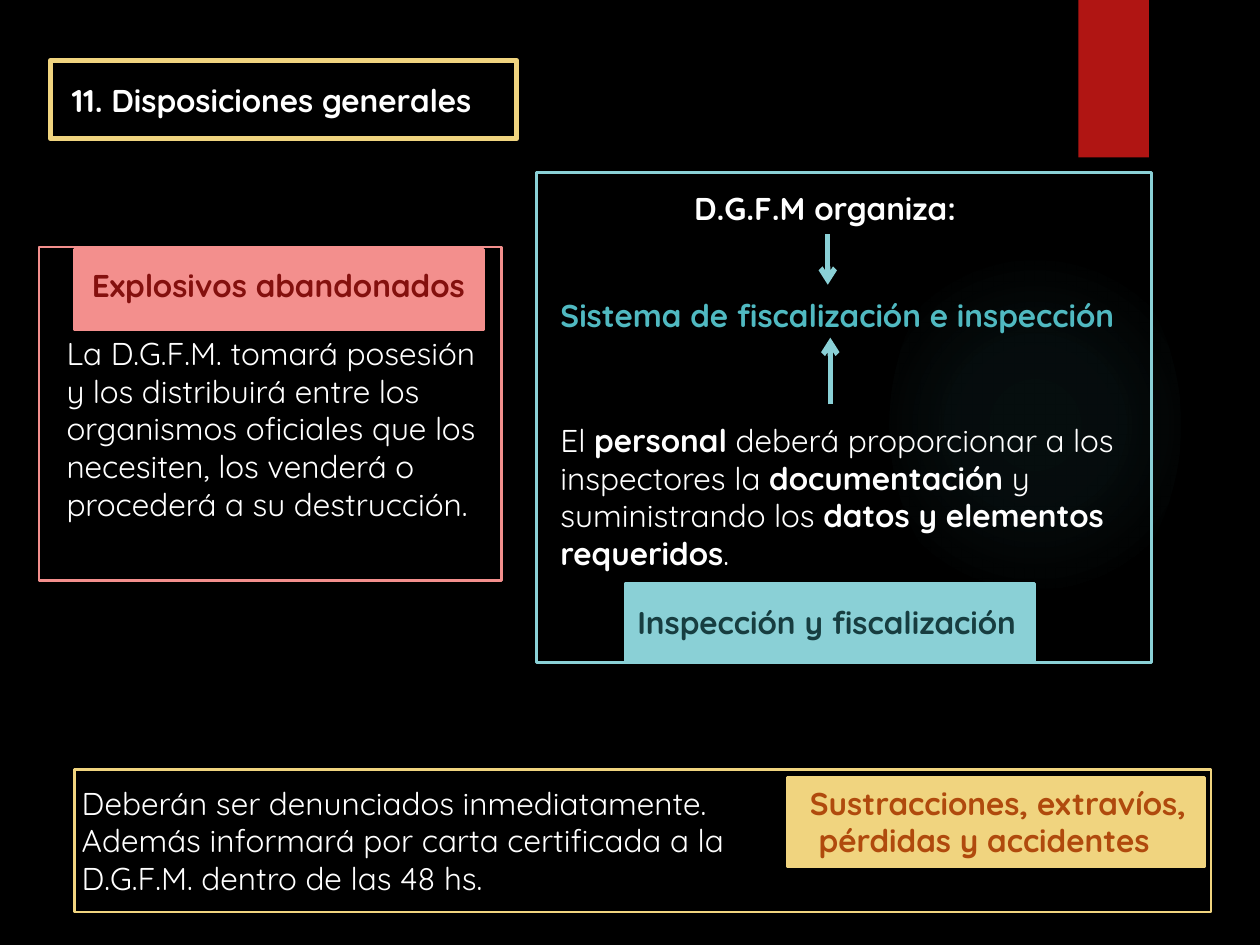
from lxml import etree
from pptx import Presentation
from pptx.dml.color import RGBColor
from pptx.enum.shapes import MSO_CONNECTOR, MSO_SHAPE
from pptx.enum.text import MSO_ANCHOR, MSO_AUTO_SIZE, PP_ALIGN
from pptx.oxml import parse_xml
from pptx.oxml.ns import qn
from pptx.util import Inches, Pt

FONT = "Quicksand"
COLORS = {
    "black": "000000", "white": "FFFFFF", "red": "B01513",
    "pink": "F38F8D", "dark red": "84100E",
    "yellow": "F0D47F", "rust": "B04A0D",
    "aqua": "8AD0D6", "teal": "50B9C1", "dark teal": "173D40",
}

TITLE = ("11. Disposiciones generales", (0.47, 0.59, 3.57, 0.4))
GLOW = (7.06, 1.83, 2.31, 3.08)
GLOW_STOPS = [(0, 7), (36, 6), (69, 0)]  # position %, opacity %
RIBBON = (8.56, 0, 0.56, 1.25)

# box, colour
LABEL_PANELS = [
    ((0.59, 1.98, 3.25, 0.64), "pink"),
    ((6.25, 6.17, 3.31, 0.71), "yellow"),
    ((4.96, 4.63, 3.25, 0.63), "aqua"),
]
# box, colour, line width
FRAMES = [
    ((0.4, 0.48, 3.7, 0.62), "yellow", 3),
    ((4.26, 1.37, 4.88, 3.89), "aqua", 1.5),
    ((0.59, 6.11, 9.02, 1.13), "yellow", 1.5),
    ((0.31, 1.96, 3.67, 2.65), "pink", 1.5),
]
# box, colour, wrapped, paragraphs of (text, bold) runs
TEXTS = [
    ((0.63, 2.06, 3.25, 0.4), "dark red", False, [[("Explosivos abandonados", True)]]),
    ((0.43, 2.6, 3.47, 1.92), "white", True, [[
        ("La D.G.F.M. tomará posesión y los distribuirá entre los organismos "
         "oficiales que los necesiten, los venderá o procederá a su destrucción.", False)]]),
    ((5.41, 1.45, 2.32, 0.4), "white", False, [[("D.G.F.M organiza:", True)]]),
    ((4.35, 2.3, 5, 0.4), "teal", True, [[("Sistema de fiscalización e inspección", True)]]),
    ((4.35, 3.29, 5, 1.31), "white", True, [[
        ("El ", False), ("personal", True),
        (" deberá proporcionar a los inspectores la ", False),
        ("documentación", True), (" y suministrando los ", False),
        ("datos y elementos requeridos", True), (".", False)]]),
    ((4.96, 4.74, 3.3, 0.4), "dark teal", False, [[("Inspección y fiscalización", True)]]),
    ((0.55, 6.17, 5.75, 1.01), "white", True, [
        [("Deberán ser denunciados inmediatamente.", False)],
        [("Además informará por carta certificada a la D.G.F.M. dentro de las 48 hs.", False)]]),
    ((6.33, 6.17, 3.4, 0.71), "rust", True, [
        [("Sustracciones, extravíos,", True)],
        [(" pérdidas y accidentes", True)]]),
]
# x, start y, end y
ARROWS = [(6.57, 1.86, 2.26), (6.59, 3.21, 2.68)]


def rgb(name):
    return RGBColor.from_string(COLORS[name])


def inches(box):
    return [Inches(value) for value in box]


def add_panel(slide, box, fill=None, line=None, width=1.5, preset=MSO_SHAPE.RECTANGLE):
    panel = slide.shapes.add_shape(preset, *inches(box))
    panel.shadow.inherit = False
    if fill:
        panel.fill.solid()
        panel.fill.fore_color.rgb = rgb(fill)
    else:
        panel.fill.background()
    if line:
        panel.line.color.rgb = rgb(line)
        panel.line.width = Pt(width)
    else:
        panel.line.fill.background()
    return panel


def add_glow(slide):
    """Add an ellipse whose colour fades out radially."""
    glow = add_panel(slide, GLOW, preset=MSO_SHAPE.OVAL)
    stops = "".join(
        f'<a:gs pos="{position * 1000}"><a:srgbClr val="{COLORS["teal"]}">'
        f'<a:alpha val="{opacity * 1000}"/></a:srgbClr></a:gs>'
        for position, opacity in GLOW_STOPS)
    gradient = parse_xml(
        '<a:gradFill xmlns:a="http://schemas.openxmlformats.org/drawingml/2006/main">'
        f'<a:gsLst>{stops}</a:gsLst><a:path path="circle">'
        '<a:fillToRect l="50000" t="50000" r="50000" b="50000"/></a:path></a:gradFill>')
    properties = glow.element.spPr
    properties.replace(properties.find(qn("a:noFill")), gradient)


def write(frame, paragraphs, color, wrapped):
    frame.word_wrap = wrapped
    frame.auto_size = MSO_AUTO_SIZE.SHAPE_TO_FIT_TEXT
    frame.vertical_anchor = MSO_ANCHOR.TOP
    for index, runs in enumerate(paragraphs):
        paragraph = frame.add_paragraph() if index else frame.paragraphs[0]
        paragraph.alignment = PP_ALIGN.LEFT
        for text, bold in runs:
            run = paragraph.add_run()
            run.text = text
            run.font.name = FONT
            run.font.size = Pt(18)
            run.font.bold = bold
            run.font.color.rgb = rgb(color)


def add_arrow(slide, x, start, end):
    arrow = slide.shapes.add_connector(
        MSO_CONNECTOR.STRAIGHT, *inches((x, start, x, end)))
    arrow.line.color.rgb = rgb("aqua")
    arrow.line.width = Pt(3)
    etree.SubElement(arrow.line._get_or_add_ln(), qn("a:tailEnd"), type="arrow")
    etree.SubElement(arrow._element.spPr, qn("a:effectLst"))


def main():
    deck = Presentation()
    deck.slide_width, deck.slide_height = Inches(10), Inches(7.5)
    slide = deck.slides.add_slide(deck.slide_layouts[5])
    slide.background.fill.solid()
    slide.background.fill.fore_color.rgb = rgb("black")

    add_glow(slide)
    add_panel(slide, RIBBON, fill="red")
    for box, color in LABEL_PANELS:
        add_panel(slide, box, fill=color, line=color)
    for box, color, width in FRAMES:
        add_panel(slide, box, line=color, width=width)

    heading, title_box = TITLE
    title = slide.shapes.title
    title.left, title.top, title.width, title.height = inches(title_box)
    write(title.text_frame, [[(heading, True)]], "white", False)

    for box, color, wrapped, paragraphs in TEXTS:
        text_box = slide.shapes.add_textbox(*inches(box))
        write(text_box.text_frame, paragraphs, color, wrapped)
    for arrow in ARROWS:
        add_arrow(slide, *arrow)

    deck.save("out.pptx")


if __name__ == "__main__":
    main()
